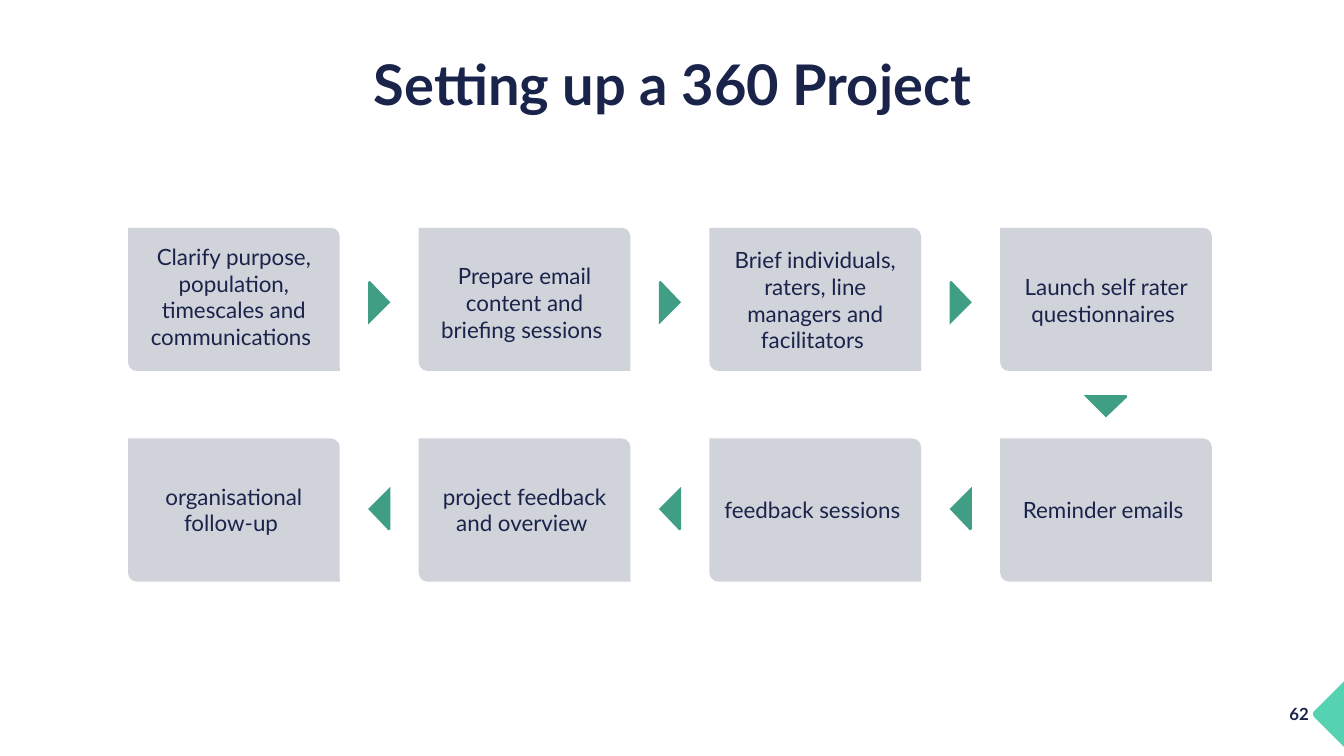
"""Build the slide showing the eight steps of setting up a 360 project."""
from math import cos, radians, sin
from pptx import Presentation
from pptx.dml.color import RGBColor
from pptx.enum.shapes import MSO_SHAPE as Shape
from pptx.enum.text import MSO_ANCHOR as Anchor, PP_ALIGN as Align
from pptx.util import Inches, Pt

NAVY = RGBColor(0x1A, 0x24, 0x4A)
GREY = RGBColor(0xD1, 0xD3, 0xDB)
GREEN = RGBColor(0x40, 0x9E, 0x85)
MINT = RGBColor(0x55, 0xD2, 0xB1)

deck = Presentation()
deck.slide_width, deck.slide_height = Inches(13.33), Inches(7.5)
shapes = deck.slides.add_slide(deck.slide_layouts[6]).shapes


def write(text, x, y, w, h, size, align=Align.CENTER, bold=False, anchor=Anchor.TOP):
    frame = shapes.add_textbox(Inches(x), Inches(y), Inches(w), Inches(h)).text_frame
    frame.word_wrap = True
    frame.vertical_anchor = anchor
    par = frame.paragraphs[0]
    par.text = text
    par.alignment = align
    par.font.name, par.font.size = "Lato", Pt(size)
    par.font.bold, par.font.color.rgb = bold, NAVY
    return par


def draw(points, color):
    first, *rest = [(Inches(x), Inches(y)) for x, y in points]
    path = shapes.build_freeform(*first)
    path.add_line_segments(rest)
    form = path.convert_to_shape()
    form.shadow.inherit = False
    form.fill.solid()
    form.fill.fore_color.rgb = color
    form.line.fill.background()


draw([(13.33, 6.76), (13.33, 7.41), (13.03, 7.11), (13.02, 7.08), (13.03, 7.06)], MINT)
write("62", 12.38, 6.93, 0.7, 0.3, 12, Align.RIGHT, True)
title = write("Setting up a 360 Project", 0.92, 0.47, 11.5, 0.79, 40,
              bold=True, anchor=Anchor.MIDDLE)
title.line_spacing = 0.9

WIDE, HIGH = 2.1, 1.42
STEP = 8.65 / 3
lefts = [1.27 + STEP * col for col in range(4)]
rows = [
    (2.26, [("Clarify purpose, population, timescales and communications ", 2.36, 1.18),
            ("Prepare email content and briefing sessions ", 2.55, 0.91),
            ("Brief individuals, raters, line managers and facilitators ", 2.39, 1.18),
            ("Launch self rater questionnaires ", 2.66, 0.64)]),
    (4.35, [("organisational follow-up ", 4.74, 0.64),
            ("project feedback and overview ", 4.74, 0.64),
            ("feedback sessions ", 4.87, 0.37),
            ("Reminder emails ", 4.87, 0.37)]),
]
for top, steps in rows:
    for left, (text, y, h) in zip(lefts, steps):
        card = shapes.add_shape(Shape.ROUND_2_DIAG_RECTANGLE, Inches(left), Inches(top),
                                Inches(WIDE), Inches(HIGH))
        card.adjustments[0], card.adjustments[1] = 0, 0.061
        card.shadow.inherit = False
        card.fill.solid()
        card.fill.fore_color.rgb = GREY
        card.line.fill.background()
        write(text, left, y, WIDE, h, 16)

WEDGE = [(-0.09, -0.21), (0.11, 0), (-0.11, 0.22), (-0.11, -0.2), (-0.1, -0.21)]
gaps = [left + (WIDE + STEP) / 2 for left in lefts[:3]]
arrows = [(x, 3, 0) for x in gaps]
arrows += [(lefts[3] + WIDE / 2, 4.03, 90)]
arrows += [(x, 5.05, 180) for x in gaps]
for x, y, turn in arrows:
    c, s = cos(radians(turn)), sin(radians(turn))
    draw([(x + c * dx - s * dy, y + s * dx + c * dy) for dx, dy in WEDGE], GREEN)

deck.save("out.pptx")
